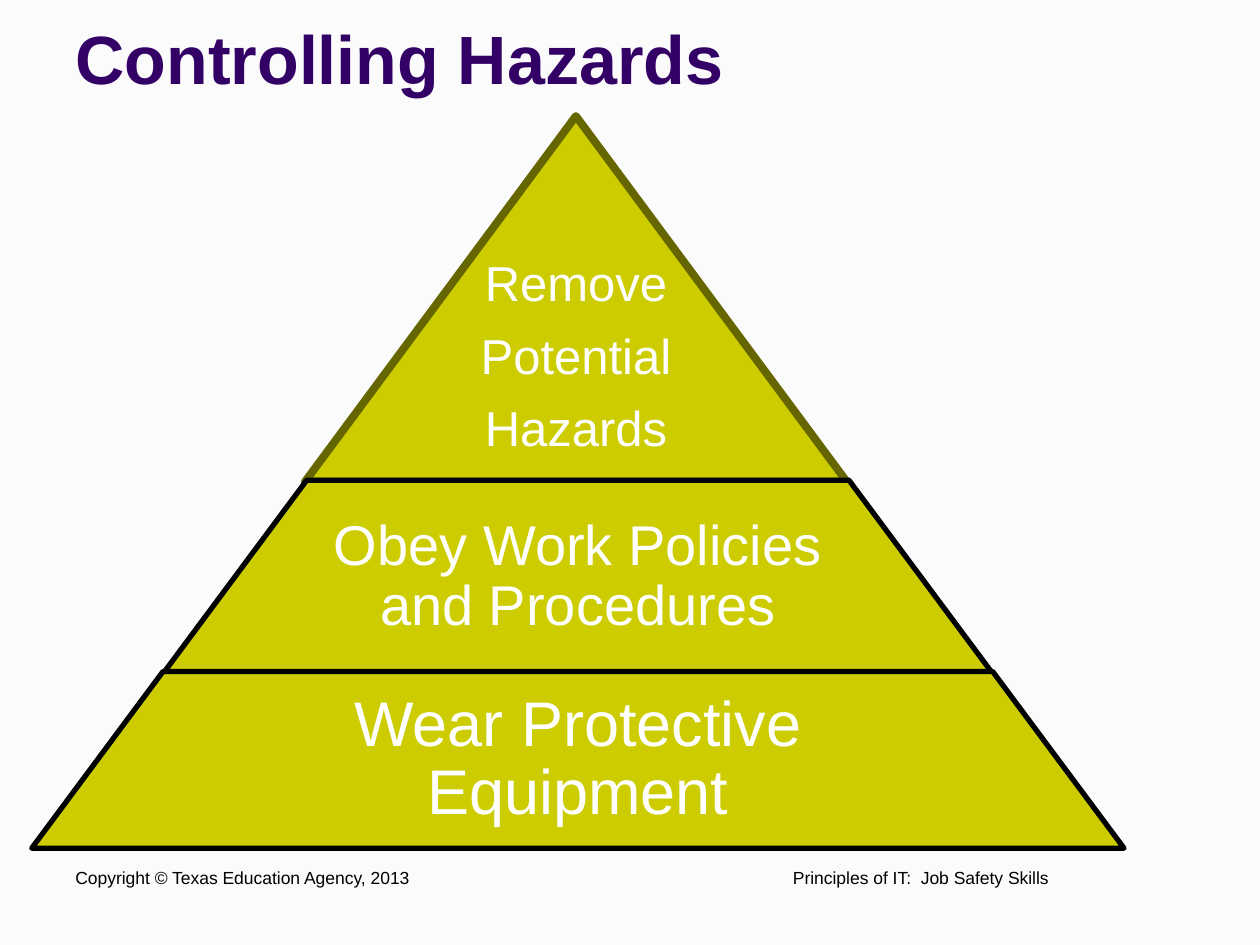
from dataclasses import dataclass

from lxml import etree
from pptx import Presentation
from pptx import util as u
from pptx.dml.color import RGBColor
from pptx.enum import shapes, text
from pptx.oxml.ns import qn


@dataclass(frozen=True)
class Theme:
    font: str = "Arial"
    back: str = "FBFBFB"
    title: str = "330066"
    fill: str = "CCCC00"
    edge: str = "666600"
    dark: str = "000000"
    light: str = "FFFFFF"
    head: int = 39
    small: int = 28
    mid: int = 32
    large: int = 36
    foot: int = 10


def rgb(code):
    return RGBColor.from_string(code)


class Deck:
    def __init__(self, theme):
        self.theme = theme
        self.show = Presentation()
        self.show.slide_width = u.Cm(25.4)
        self.show.slide_height = u.Cm(19.05)
        self.slide = self.show.slides.add_slide(self.show.slide_layouts[5])
        back = self.slide.background.fill
        back.solid()
        back.fore_color.rgb = rgb(theme.back)

    def letter(self, frame, words, size, color, align, bold=False, line=None, gap=0):
        frame.text = words
        frame.word_wrap = True
        frame.auto_size = text.MSO_AUTO_SIZE.NONE
        for rank, para in enumerate(frame.paragraphs):
            para.alignment = align
            if line:
                para.line_spacing = line
            if gap and rank:
                para.space_before = u.Pt(gap)
            for run in para.runs:
                run.font.name = self.theme.font
                run.font.size = u.Pt(size)
                run.font.bold = bold
                run.font.color.rgb = rgb(color)

    def title(self, words, box):
        head = self.slide.shapes.title
        head.left, head.top, head.width, head.height = map(u.Cm, box)
        self.letter(head.text_frame, words, self.theme.head, self.theme.title,
                    text.PP_ALIGN.LEFT, bold=True)
        head.text_frame.vertical_anchor = text.MSO_ANCHOR.BOTTOM

    def label(self, words, box, align):
        note = self.slide.shapes.add_textbox(*map(u.Cm, box))
        self.letter(note.text_frame, words, self.theme.foot, self.theme.dark, align)

    def tier(self, words, box, size, edge, width, share=0.65, low=False):
        left, top, wide, high = box
        part = self.slide.shapes.add_shape(
            shapes.MSO_SHAPE.TRAPEZOID, *map(u.Cm, box))
        part.adjustments[0] = 0.743
        part.shadow.inherit = False
        part.fill.solid()
        part.fill.fore_color.rgb = rgb(self.theme.fill)
        part.line.color.rgb = rgb(edge)
        part.line.width = u.Pt(width)
        line = part.element.spPr.find(qn("a:ln"))
        etree.SubElement(line, qn("a:round"))

        inset = wide * (1 - share) / 2
        area = (left + inset, top, wide * share, high)
        note = self.slide.shapes.add_textbox(*map(u.Cm, area))
        frame = note.text_frame
        self.letter(frame, words, size, self.theme.light, text.PP_ALIGN.CENTER,
                    line=0.9, gap=11)
        frame.margin_left = frame.margin_right = u.Cm(0.1)
        frame.margin_top = frame.margin_bottom = u.Cm(0.1)
        frame.vertical_anchor = text.MSO_ANCHOR.MIDDLE
        if low:
            frame.vertical_anchor = text.MSO_ANCHOR.BOTTOM
            frame.margin_bottom = u.Cm(0.5)


def main():
    theme = Theme()
    deck = Deck(theme)
    deck.title("Controlling Hazards", (1.27, 0.33, 17.35, 1.78))
    deck.label("Principles of IT:  Job Safety Skills",
               (8.69, 17.35, 12.7, 1.27), text.PP_ALIGN.RIGHT)
    deck.tier("Remove\nPotential\nHazards", (6.15, 2.34, 10.92, 7.37),
              theme.small, theme.edge, 4.5, share=1, low=True)
    deck.tier("Obey Work Policies and Procedures", (3.28, 9.68, 16.74, 3.91),
              theme.mid, theme.dark, 3)
    deck.tier("Wear Protective Equipment", (0.64, 13.54, 22.02, 3.56),
              theme.large, theme.dark, 3)
    deck.label("Copyright © Texas Education Agency, 2013",
               (1.27, 17.35, 9.53, 1.27), text.PP_ALIGN.LEFT)
    deck.show.save("out.pptx")


if __name__ == "__main__":
    main()
